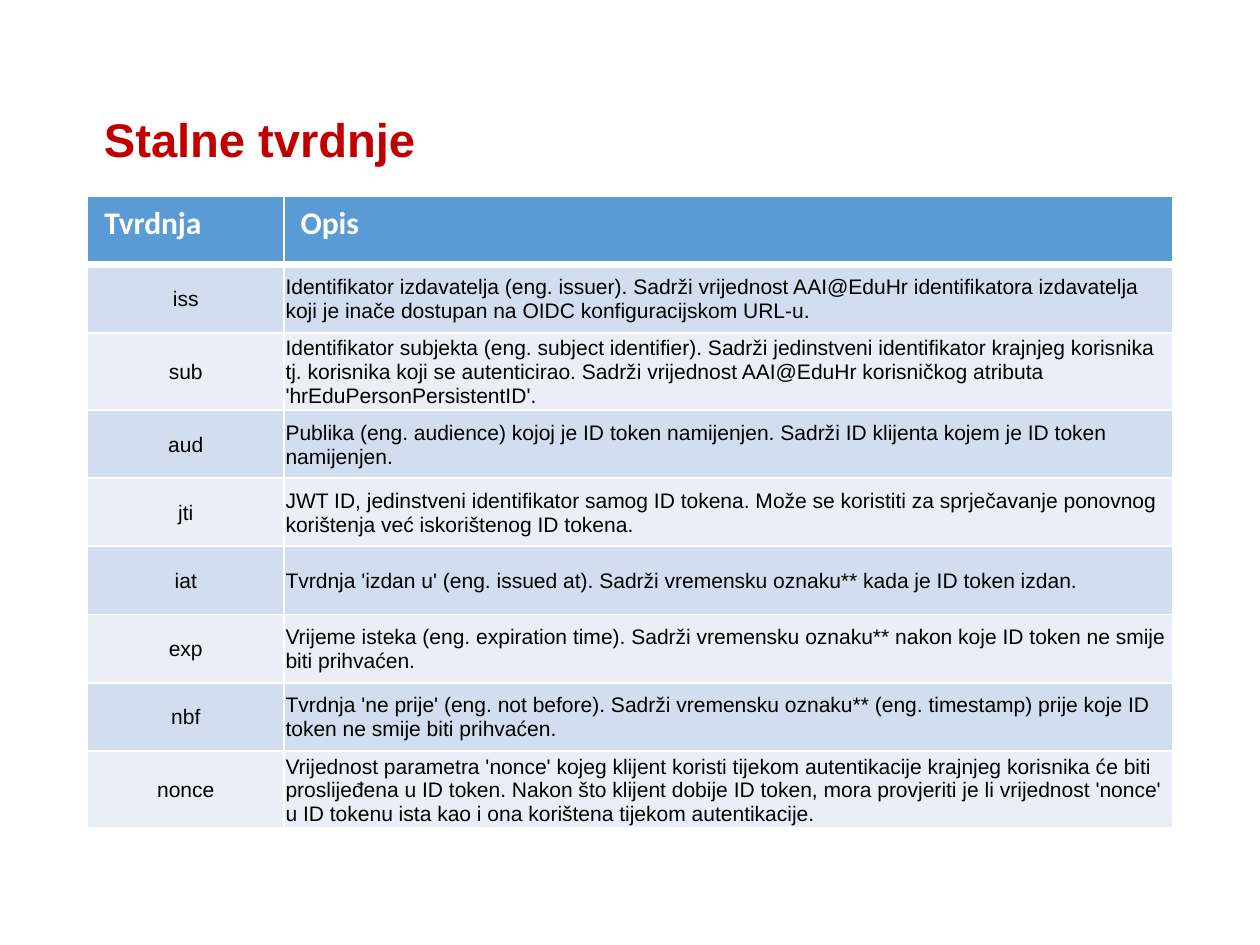
from lxml.etree import SubElement
from pptx import Presentation
from pptx.dml.color import RGBColor
from pptx.enum.text import MSO_ANCHOR, PP_ALIGN
from pptx.oxml.ns import qn
from pptx.util import Pt

CLAIMS = [
    ("iss", "Identifikator izdavatelja (eng. issuer). Sadrži vrijednost AAI@EduHr identifikatora "
            "izdavatelja koji je inače dostupan na OIDC konfiguracijskom URL-u."),
    ("sub", "Identifikator subjekta (eng. subject identifier). Sadrži jedinstveni identifikator "
            "krajnjeg korisnika tj. korisnika koji se autenticirao. Sadrži vrijednost AAI@EduHr "
            "korisničkog atributa 'hrEduPersonPersistentID'."),
    ("aud", "Publika (eng. audience) kojoj je ID token namijenjen. Sadrži ID klijenta kojem je "
            "ID token namijenjen."),
    ("jti", "JWT ID, jedinstveni identifikator samog ID tokena. Može se koristiti za sprječavanje "
            "ponovnog korištenja već iskorištenog ID tokena."),
    ("iat", "Tvrdnja 'izdan u' (eng. issued at). Sadrži vremensku oznaku** kada je ID token izdan."),
    ("exp", "Vrijeme isteka (eng. expiration time). Sadrži vremensku oznaku** nakon koje ID token "
            "ne smije biti prihvaćen."),
    ("nbf", "Tvrdnja 'ne prije' (eng. not before). Sadrži vremensku oznaku** (eng. timestamp) "
            "prije koje ID token ne smije biti prihvaćen."),
    ("nonce", "Vrijednost parametra 'nonce' kojeg klijent koristi tijekom autentikacije krajnjeg "
              "korisnika će biti proslijeđena u ID token. Nakon što klijent dobije ID token, mora "
              "provjeriti je li vrijednost 'nonce' u ID tokenu ista kao i ona korištena tijekom "
              "autentikacije."),
]


def color(code):
    return RGBColor.from_string(code)


class Deck:
    body, head = "Arial", "Calibri"
    red, blue, white, black = "C00000", "5B9BD5", "FFFFFF", "000000"
    bands = "D2DEEF", "EAEFF7"

    def __init__(self, wide, high):
        self.show = Presentation()
        self.show.slide_width, self.show.slide_height = Pt(wide), Pt(high)
        self.slide = self.show.slides.add_slide(self.show.slide_layouts[6])

    def put_text(self, frame, text, size, font, hue, bold):
        frame.text = text
        for run in frame.paragraphs[0].runs:
            run.font.size, run.font.name, run.font.bold = Pt(size), font, bold
            run.font.color.rgb = color(hue)

    def title(self, text, left, top, wide, high):
        frame = self.slide.shapes.add_textbox(Pt(left), Pt(top), Pt(wide), Pt(high)).text_frame
        frame.word_wrap = True
        frame.vertical_anchor = MSO_ANCHOR.MIDDLE
        self.put_text(frame, text, 20.2, self.body, self.red, True)
        frame.paragraphs[0].line_spacing = 0.9

    def border(self, cell, **widths):
        props = cell._tc.get_or_add_tcPr()
        for side in "LRTB":
            line = SubElement(props, qn(f"a:ln{side}"), w=str(Pt(widths.get(side, 1))))
            fill = SubElement(line, qn("a:solidFill"))
            SubElement(fill, qn("a:srgbClr"), val=self.white)

    def paint(self, cell, hue):
        cell.fill.solid()
        cell.fill.fore_color.rgb = color(hue)

    def label(self, cell, text):
        self.border(cell, B=3)
        self.paint(cell, self.blue)
        self.put_text(cell.text_frame, text, 13.5, self.head, self.white, True)

    def entry(self, cell, text, row, col):
        self.border(cell, T=3 if row == 1 else 1)
        self.paint(cell, self.bands[(row - 1) % 2])
        cell.margin_left = cell.margin_right = cell.margin_top = Pt(0.7)
        cell.margin_bottom = 0
        cell.vertical_anchor = MSO_ANCHOR.MIDDLE
        self.put_text(cell.text_frame, text, 9, self.body, self.black, False)
        cell.text_frame.paragraphs[0].alignment = PP_ALIGN.LEFT if col else PP_ALIGN.CENTER

    def table(self, heads, rows, left, top, cols, high):
        grid = self.slide.shapes.add_table(
            len(rows) + 1, len(cols), Pt(left), Pt(top), Pt(sum(cols)), Pt(high * (len(rows) + 1))
        ).table
        for col, wide in zip(grid.columns, cols):
            col.width = Pt(wide)
        for row in grid.rows:
            row.height = Pt(high)
        for col, text in enumerate(heads):
            self.label(grid.cell(0, col), text)
        for row, texts in enumerate(rows, 1):
            for col, text in enumerate(texts):
                self.entry(grid.cell(row, col), text, row, col)


def main():
    deck = Deck(540, 405)
    deck.title("Stalne tvrdnje", 37.5, 21.6, 465.8, 78.5)
    deck.table(("Tvrdnja", "Opis"), CLAIMS, 37.5, 84.2, (84.2, 381.2), 29.2)
    deck.show.save("out.pptx")


if __name__ == "__main__":
    main()
